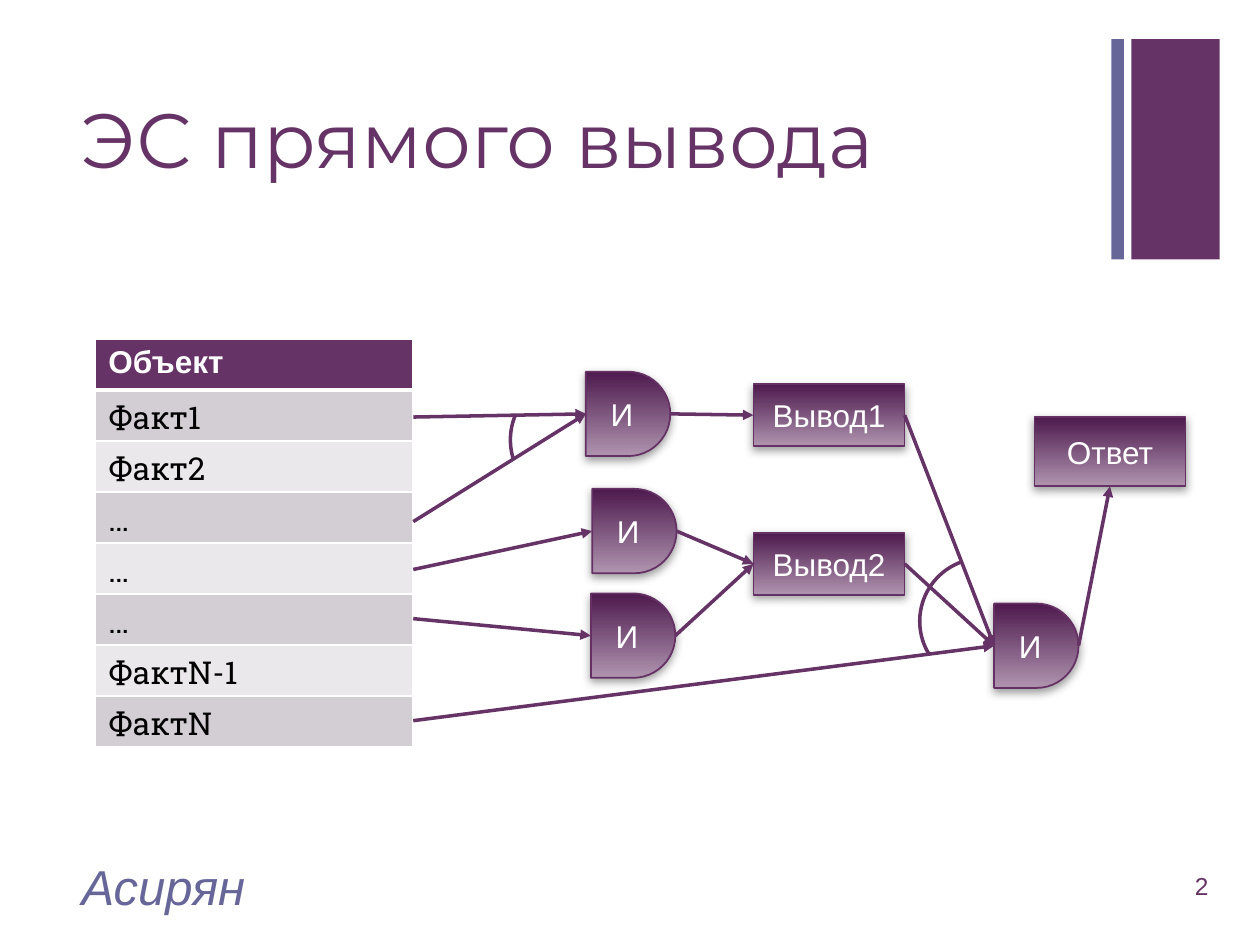
from lxml import etree
from pptx import Presentation
from pptx.dml.color import RGBColor
from pptx.enum import shapes, text
from pptx.oxml import parse_xml
from pptx.oxml.ns import nsdecls, qn
from pptx.util import Inches, Pt

PURPLE = RGBColor(0x66, 0x33, 0x66)
BLUE = RGBColor(0x66, 0x66, 0x99)
DARK = RGBColor(0x4D, 0x1A, 0x4D)
LIGHT = RGBColor(0xAF, 0x94, 0xAF)
OUTLINE = RGBColor(0x65, 0x31, 0x65)
WHITE = RGBColor(0xFF, 0xFF, 0xFF)
BLACK = RGBColor(0, 0, 0)
BANDS = (RGBColor(0xD3, 0xCE, 0xD3), RGBColor(0xEA, 0xE8, 0xEA))

TITLE = "ЭС прямого вывода"
AUTHOR = "Асирян"
PAGE = "2"
FACTS = ["Объект", "Факт1", "Факт2", "…", "…", "…", "ФактN-1", "ФактN"]
TABLE_LEFT, TABLE_TOP, TABLE_WIDTH, ROW_HEIGHT = 0.76, 2.69, 2.52, 0.405

BARS = [(8.98, 0.7, PURPLE), (8.82, 0.1, BLUE)]  # left, width, colour
GATE, BOX = shapes.MSO_SHAPE.FLOWCHART_DELAY, shapes.MSO_SHAPE.RECTANGLE
GATE_SIZE, BOX_SIZE, ANSWER_SIZE = (0.67, 0.67), (1.2, 0.49), (1.2, 0.55)
NODES = {  # name: (kind, label, left, top, size)
    "gate1": (GATE, "И", 4.65, 2.95, GATE_SIZE),
    "gate2": (GATE, "И", 4.70, 3.88, GATE_SIZE),
    "gate3": (GATE, "И", 4.69, 4.71, GATE_SIZE),
    "final gate": (GATE, "И", 7.89, 4.79, GATE_SIZE),
    "result1": (BOX, "Вывод1", 5.98, 3.05, BOX_SIZE),
    "result2": (BOX, "Вывод2", 5.98, 4.23, BOX_SIZE),
    "answer": (BOX, "Ответ", 8.21, 3.31, ANSWER_SIZE),
}
FACT_LINKS = [(3.31, "gate1"), (4.14, "gate1"), (4.52, "gate2"),
              (4.91, "gate3"), (5.72, "final gate")]  # height at the table, target
NODE_LINKS = [("gate1", "result1"), ("gate2", "result2"), ("gate3", "result2"),
              ("result1", "final gate"), ("result2", "final gate"),
              ("final gate", "answer")]
LEFT_SITE, BOTTOM_SITE, RIGHT_SITE = 1, 2, 3
ARCS = [(4.05, 2.99, 203.9, (190.466, 0)),
        (7.30, 4.43, 252.8, (152.966, 214.384))]  # left, top, rotation, angles


def write(frame, content, size=18, font="Arial", color=WHITE, bold=False,
          italic=False, align=text.PP_ALIGN.LEFT, spacing=None):
    paragraph = frame.paragraphs[0]
    paragraph.alignment = align
    paragraph.line_spacing = spacing
    run = paragraph.add_run()
    run.text = content
    run.font.size, run.font.name = Pt(size), font
    run.font.bold, run.font.italic = bold, italic
    run.font.color.rgb = color


def add_shape(slide, kind, left, top, width, height):
    shape = slide.shapes.add_shape(
        kind, Inches(left), Inches(top), Inches(width), Inches(height))
    shape.shadow.inherit = False
    return shape


def add_node(slide, kind, label, left, top, size):
    shape = add_shape(slide, kind, left, top, *size)
    shape.fill.gradient()
    shape.fill.gradient_angle = 270
    for stop, color in zip(shape.fill.gradient_stops, (DARK, LIGHT)):
        stop.color.rgb = color
    shape.line.color.rgb, shape.line.width = OUTLINE, Pt(1)
    effects = shape._element.spPr.find(qn("a:effectLst"))
    effects.append(parse_xml(
        f'<a:outerShdw {nsdecls("a")} blurRad="{Pt(5)}" dist="{Pt(2)}" dir="5400000" '
        'rotWithShape="0"><a:srgbClr val="808080"><a:alpha val="75000"/></a:srgbClr>'
        '</a:outerShdw>'))
    frame = shape.text_frame
    frame.vertical_anchor = text.MSO_ANCHOR.MIDDLE
    write(frame, label, align=text.PP_ALIGN.CENTER)
    return shape


def add_arrow(slide, target, site, source=None, height=0):
    """Link a node, or the table's right edge at a given height, to a target node."""
    start = Inches(TABLE_LEFT + TABLE_WIDTH), Inches(height)
    connector = slide.shapes.add_connector(
        shapes.MSO_CONNECTOR.STRAIGHT, *start, *start)
    if source is not None:
        connector.begin_connect(source, RIGHT_SITE)
    connector.end_connect(target, site)
    connector.line.color.rgb, connector.line.width = PURPLE, Pt(2)
    etree.SubElement(connector.line._get_or_add_ln(), qn("a:tailEnd"), type="triangle")
    etree.SubElement(connector._element.spPr, qn("a:effectLst"))


def set_borders(cell, bottom):
    properties = cell._tc.get_or_add_tcPr()
    for index, (side, width) in enumerate(
            (("lnL", 1), ("lnR", 1), ("lnT", 1), ("lnB", bottom))):
        properties.insert(index, parse_xml(
            f'<a:{side} {nsdecls("a")} w="{Pt(width)}"><a:solidFill>'
            f'<a:srgbClr val="{WHITE}"/></a:solidFill></a:{side}>'))


def add_facts(slide):
    table = slide.shapes.add_table(
        len(FACTS), 1, Inches(TABLE_LEFT), Inches(TABLE_TOP), Inches(TABLE_WIDTH),
        Inches(ROW_HEIGHT * len(FACTS))).table
    for index, fact in enumerate(FACTS):
        cell = table.cell(index, 0)
        header = index == 0
        cell.fill.solid()
        cell.fill.fore_color.rgb = PURPLE if header else BANDS[(index - 1) % 2]
        set_borders(cell, 3 if header else 1)
        if header:
            write(cell.text_frame, fact, bold=True)
        else:
            write(cell.text_frame, fact, font="Roboto Slab", color=BLACK)


def add_footer(slide, left, width, content, **style):
    frame = slide.shapes.add_textbox(
        Inches(left), Inches(6.83), Inches(width), Inches(0.4)).text_frame
    frame.word_wrap = True
    frame.vertical_anchor = text.MSO_ANCHOR.MIDDLE
    write(frame, content, **style)


def main():
    presentation = Presentation()
    presentation.slide_width, presentation.slide_height = Inches(10), Inches(7.5)
    slide = presentation.slides.add_slide(presentation.slide_layouts[5])

    for left, width, color in BARS:
        bar = add_shape(slide, BOX, left, 0.31, width, 1.75)
        bar.fill.solid()
        bar.fill.fore_color.rgb = color
        bar.line.fill.background()

    title = slide.shapes.title
    title.left, title.top = Inches(0.55), Inches(0.53)
    title.width, title.height = Inches(8.26), Inches(1.22)
    title.text_frame.vertical_anchor = text.MSO_ANCHOR.MIDDLE
    write(title.text_frame, TITLE, size=44, font="Montserrat", color=PURPLE, spacing=0.9)
    add_footer(slide, 9.08, 0.61, PAGE, size=14, color=PURPLE, align=text.PP_ALIGN.RIGHT)
    add_footer(slide, 0.55, 6.7, AUTHOR, size=28, color=BLUE, italic=True)

    add_facts(slide)
    nodes = {name: add_node(slide, *node) for name, node in NODES.items()}
    for height, target in FACT_LINKS:
        add_arrow(slide, nodes[target], LEFT_SITE, height=height)
    for source, target in NODE_LINKS:
        site = BOTTOM_SITE if target == "answer" else LEFT_SITE
        add_arrow(slide, nodes[target], site, source=nodes[source])

    for left, top, rotation, angles in ARCS:
        arc = add_shape(slide, shapes.MSO_SHAPE.ARC, left, top, 1, 1)
        arc.rotation = rotation
        arc.adjustments[0], arc.adjustments[1] = angles
        arc.fill.background()
        arc.line.color.rgb, arc.line.width = PURPLE, Pt(2)

    presentation.save("out.pptx")


if __name__ == "__main__":
    main()
